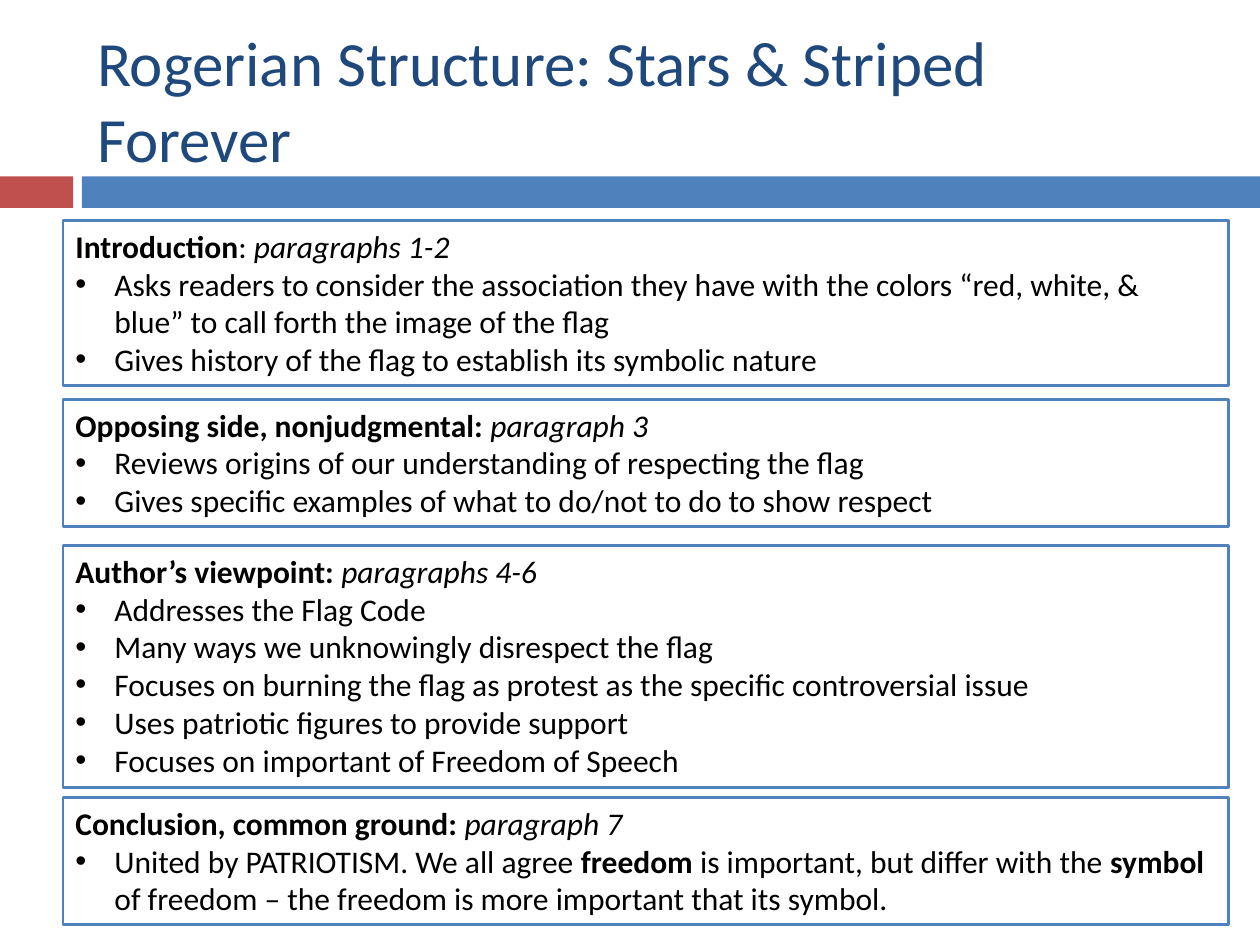
from pptx import Presentation
from pptx.dml.color import RGBColor
from pptx.enum import shapes, text
from pptx.oxml import parse_xml
from pptx.oxml.ns import nsdecls
from pptx.util import Inches, Pt

RED = RGBColor(0xC0, 0x50, 0x4D)
BLUE = RGBColor(0x4F, 0x81, 0xBD)
NAVY = RGBColor(0x1F, 0x49, 0x7D)
WHITE = RGBColor(0xFF, 0xFF, 0xFF)
BLACK = RGBColor(0, 0, 0)
FONT = "Calibri"
BULLET_INDENT = Inches(0.31)

# Each section: top, height, heading spans, bullets; a span is (words, style).
SECTIONS = [
    (1.75, 1.31,
     [("Introduction", "bold"), (": ", ""), ("paragraphs 1-2", "italic")],
     [[("Asks readers to consider the association they have with the colors "
        "“red, white, & blue” to call forth the image of the flag", "")],
      [("Gives history of the flag to establish its symbolic nature", "")]]),
    (3.17, 1.01,
     [("Opposing side, nonjudgmental: ", "bold"), ("paragraph 3", "italic")],
     [[("Reviews origins of our understanding of respecting the flag", "")],
      [("Gives specific examples of what to do/not to do to show respect", "")]]),
    (4.33, 1.92,
     [("Author’s viewpoint: ", "bold"), ("paragraphs 4-6", "italic")],
     [[("Addresses the Flag Code", "")],
      [("Many ways we unknowingly disrespect the flag", "")],
      [("Focuses on burning the flag as protest as the specific "
        "controversial issue", "")],
      [("Uses patriotic figures to provide support", "")],
      [("Focuses on important of Freedom of Speech", "")]]),
    (6.33, 1.01,
     [("Conclusion, common ground: ", "bold"), ("paragraph 7", "italic")],
     [[("United by PATRIOTISM. We all agree ", ""), ("freedom", "bold"),
       (" is important, but differ with the ", ""), ("symbol", "bold"),
       (" of freedom – the freedom is more important that its symbol.", "")]]),
]


def add_rectangle(page, left, top, width, height, fill):
    box = page.shapes.add_shape(
        shapes.MSO_SHAPE.RECTANGLE,
        Inches(left), Inches(top), Inches(width), Inches(height))
    box.shadow.inherit = False
    box.fill.solid()
    box.fill.fore_color.rgb = fill
    box.line.fill.background()
    return box


def set_font(para, size, color):
    para.font.name = FONT
    para.font.size = Pt(size)
    para.font.color.rgb = color


def set_title(page, words):
    title = page.shapes.title
    title.left, title.top = Inches(0.67), Inches(0.25)
    title.width, title.height = Inches(8.92), Inches(1.08)
    frame = title.text_frame
    frame.text = words
    frame.word_wrap = True
    frame.auto_size = text.MSO_AUTO_SIZE.NONE
    frame.vertical_anchor = text.MSO_ANCHOR.MIDDLE
    frame.margin_right = Inches(0.3)
    para = frame.paragraphs[0]
    para.alignment = text.PP_ALIGN.LEFT
    set_font(para, 36, NAVY)


def add_bullet(para):
    properties = para._p.get_or_add_pPr()
    properties.set("marL", str(BULLET_INDENT))
    properties.set("indent", str(-BULLET_INDENT))
    properties.append(parse_xml(f'<a:buFont {nsdecls("a")} typeface="Arial"/>'))
    properties.append(parse_xml(f'<a:buChar {nsdecls("a")} char="•"/>'))


def write_spans(para, spans):
    para.alignment = text.PP_ALIGN.LEFT
    set_font(para, 18, BLACK)
    for words, style in spans:
        span = para.add_run()
        span.text = words
        if style == "bold":
            span.font.bold = True
        elif style == "italic":
            span.font.italic = True


def add_section(page, top, height, heading, bullets):
    box = add_rectangle(page, 0.5, top, 9.25, height, WHITE)
    box.line.color.rgb = BLUE
    box.line.width = Pt(1.5)
    frame = box.text_frame
    frame.word_wrap = True
    frame.auto_size = text.MSO_AUTO_SIZE.SHAPE_TO_FIT_TEXT
    frame.vertical_anchor = text.MSO_ANCHOR.TOP
    write_spans(frame.paragraphs[0], heading)
    for spans in bullets:
        para = frame.add_paragraph()
        write_spans(para, spans)
        add_bullet(para)


def main():
    deck = Presentation()
    deck.slide_width, deck.slide_height = Inches(10), Inches(7.5)
    page = deck.slides.add_slide(deck.slide_layouts.get_by_name("Title Only"))
    add_rectangle(page, 0, 1.4, 0.58, 0.25, RED)
    add_rectangle(page, 0.65, 1.4, 9.35, 0.25, BLUE)
    set_title(page, "Rogerian Structure: Stars & Striped Forever")
    for section in SECTIONS:
        add_section(page, *section)
    deck.save("out.pptx")


if __name__ == "__main__":
    main()
